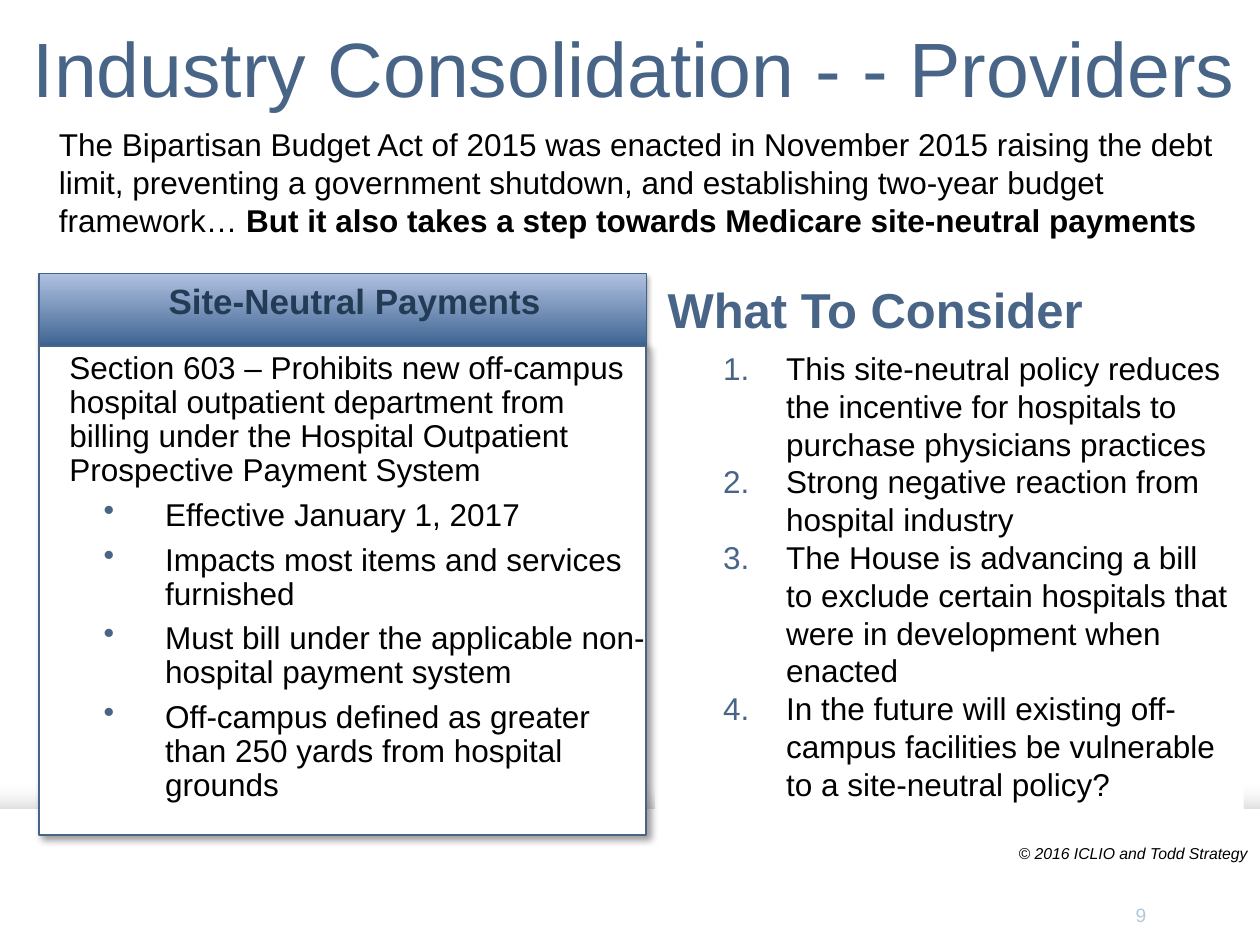
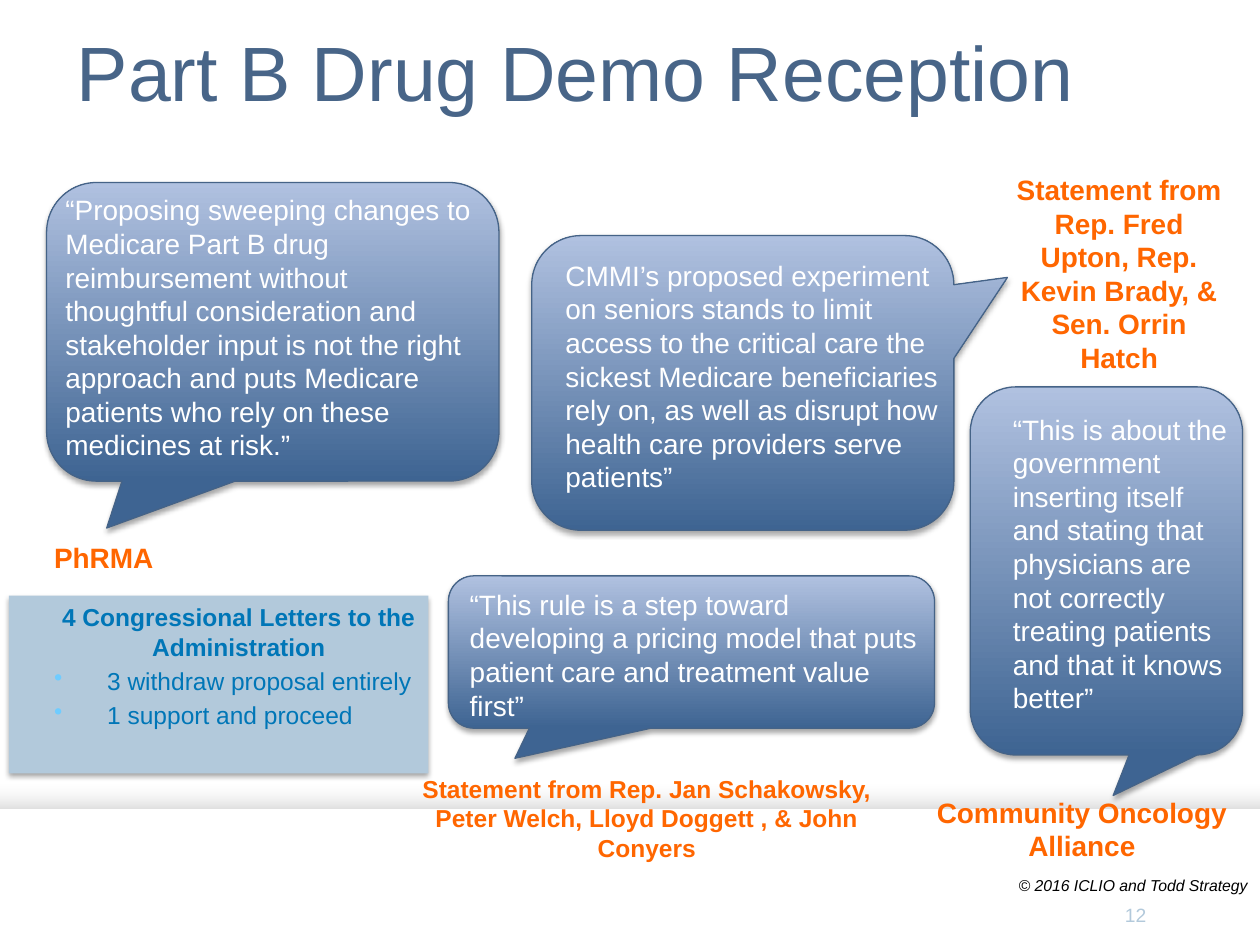
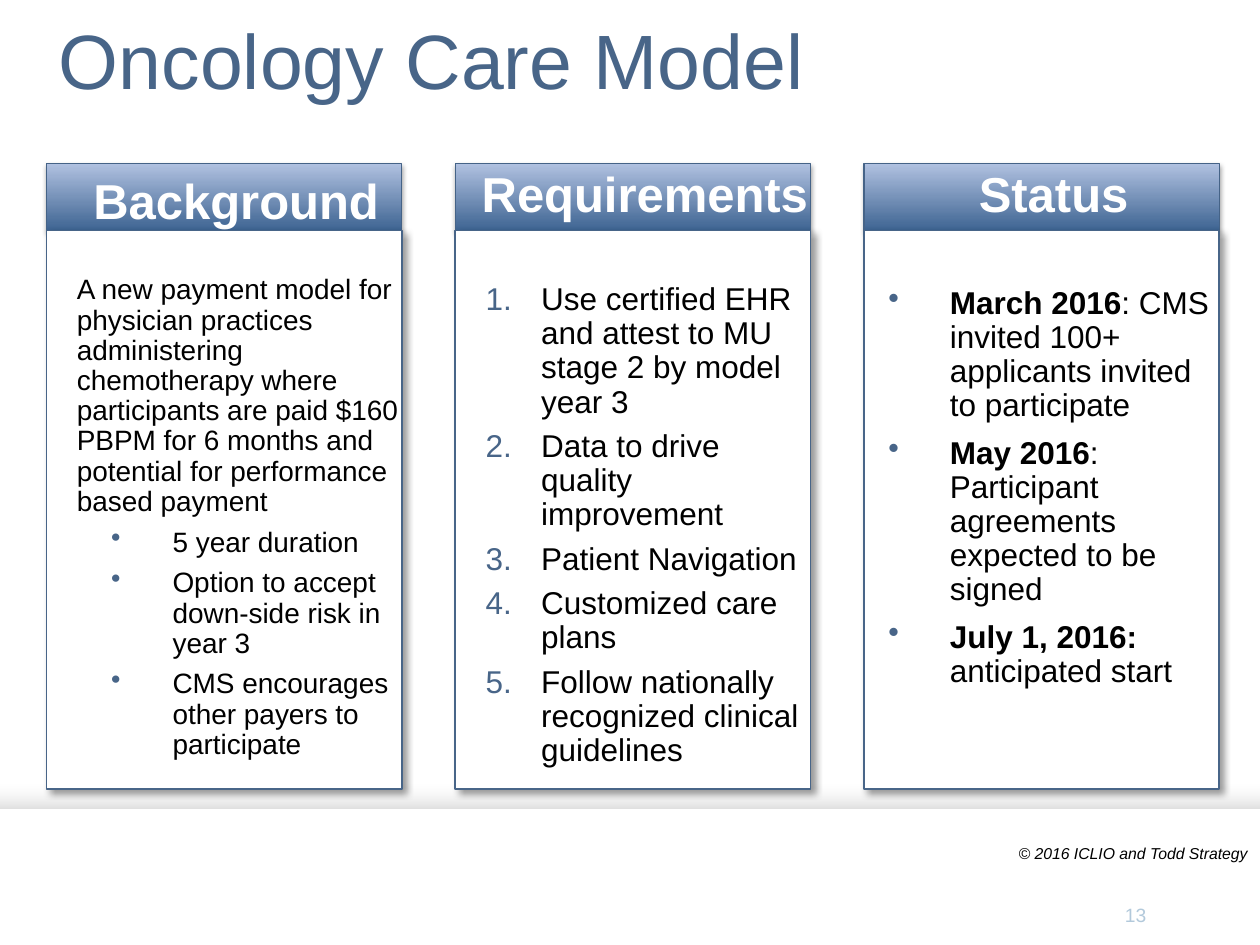
"""Build three slides on provider consolidation, the Part B drug demo and the Oncology Care Model."""
from lxml import etree
from pptx import Presentation
from pptx.dml.color import RGBColor
from pptx.enum.shapes import MSO_SHAPE
from pptx.enum.text import MSO_ANCHOR, PP_ALIGN
from pptx.oxml.ns import qn
from pptx.util import Cm, Pt

RECT = MSO_SHAPE.RECTANGLE
CALLOUT = MSO_SHAPE.ROUNDED_RECTANGULAR_CALLOUT
TOP, MIDDLE = MSO_ANCHOR.TOP, MSO_ANCHOR.MIDDLE
LEFT, CENTER, RIGHT = PP_ALIGN.LEFT, PP_ALIGN.CENTER, PP_ALIGN.RIGHT

FONT = "Arial"
BLACK = RGBColor(0x00, 0x00, 0x00)
WHITE = RGBColor(0xFF, 0xFF, 0xFF)
SLATE = RGBColor(0x48, 0x65, 0x88)
EDGE = RGBColor(0x45, 0x63, 0x87)
DEEP = RGBColor(0x3E, 0x64, 0x92)
HAZE = RGBColor(0xB0, 0xC1, 0xE0)
NAVY = RGBColor(0x24, 0x3B, 0x55)
PALE = RGBColor(0xB2, 0xC9, 0xDB)
BLUE = RGBColor(0x00, 0x76, 0xB7)
SKY = RGBColor(0x6F, 0xCC, 0xFF)
ORANGE = RGBColor(0xFF, 0x66, 0x00)

GRADIENT = [DEEP, HAZE]
BAND_SHADOW = (27, 17.5, 0, 270)
SOFT_SHADOW = (35, 3.1, 1.8, 90)
CARD_SHADOW = (40, 4, 3, 45)
RAISED = dict(fill=GRADIENT, line=EDGE, line_width=0.75, shadow=SOFT_SHADOW)
CARD = dict(fill=WHITE, line=SLATE, line_width=1, shadow=CARD_SHADOW, side=0)

CARD_TEXT = dict(spacing=0.9, before=2, after=4)
CARD_INTRO = dict(CARD_TEXT, indent=0.61)
CARD_BULLET = dict(CARD_TEXT, indent=2.54, hang=1.24, bullet="•")
HEADER_TEXT = dict(bold=True, align=CENTER, indent=0.48)


def add_box(slide, at, kind=None, fill=None, line=None, line_width=1, shadow=None,
            side=0.25, top=0.13, anchor=TOP):
    """Add a text box, or a preset shape when a kind is given."""
    place = [Cm(length) for length in at]
    if kind is None:
        box = slide.shapes.add_textbox(*place)
    else:
        box = slide.shapes.add_shape(kind, *place)
        box.shadow.inherit = False
        if isinstance(fill, RGBColor):
            box.fill.solid()
            box.fill.fore_color.rgb = fill
        else:
            box.fill.gradient()
            box.fill.gradient_angle = 90
            for stop, color in zip(box.fill.gradient_stops, fill):
                stop.color.rgb = color
        if line is None:
            box.line.fill.background()
        else:
            box.line.color.rgb = line
            box.line.width = Pt(line_width)
        if shadow:
            alpha, blur, distance, angle = shadow
            effects = box._element.spPr.find(qn("a:effectLst"))
            outer = etree.SubElement(effects, qn("a:outerShdw"), blurRad=str(Pt(blur)),
                                     dist=str(Pt(distance)), dir=str(angle * 60000),
                                     rotWithShape="0")
            tint = etree.SubElement(outer, qn("a:srgbClr"), val="000000")
            etree.SubElement(tint, qn("a:alpha"), val=str(alpha * 1000))
    frame = box.text_frame
    frame.word_wrap = True
    frame.vertical_anchor = anchor
    frame.margin_left = frame.margin_right = Cm(side)
    frame.margin_top, frame.margin_bottom = Cm(top), Cm(0.13)
    return box


def write(box, text, size=18, color=BLACK, bold=False, italic=False, align=LEFT, indent=0,
          hang=0, bullet=None, bullet_color=SLATE, spacing=1.0, before=0, after=0):
    """Add one paragraph; text between double asterisks is bold."""
    frame = box.text_frame
    first = not frame.text
    paragraph = frame.paragraphs[0] if first else frame.add_paragraph()
    props = paragraph._p.get_or_add_pPr()
    props.set("marL", str(Cm(indent)))
    props.set("indent", str(-Cm(hang)))
    if bullet:
        bullet_tint = etree.SubElement(props, qn("a:buClr"))
        etree.SubElement(bullet_tint, qn("a:srgbClr"), val=str(bullet_color))
        if bullet == "1.":
            etree.SubElement(props, qn("a:buAutoNum"), type="arabicPeriod")
        else:
            etree.SubElement(props, qn("a:buChar"), char=bullet)
    paragraph.alignment = align
    paragraph.line_spacing = spacing
    paragraph.space_before = Pt(0 if first else before)
    paragraph.space_after = Pt(after)
    for index, piece in enumerate(text.split("**")):
        if piece:
            run = paragraph.add_run()
            run.text = piece
            run.font.name = FONT
            run.font.size = Pt(size)
            run.font.color.rgb = color
            run.font.bold = bold or index % 2 == 1
            run.font.italic = italic


deck = Presentation()
deck.slide_width, deck.slide_height = Cm(25.4), Cm(19.05)

slides = []
for title, title_at, number, copyright_top in [
    ("Industry Consolidation - - Providers", (0.41, 0.28, 25.35, 3.18), "9", 16.87),
    ("Part B Drug Demo Reception", (1.3, 0.36, 22.86, 3.18), "12", 17.53),
    ("Oncology Care Model", (0.94, 0.13, 22.86, 3.18), "13", 16.87),
]:
    slide = deck.slides.add_slide(deck.slide_layouts[6])
    add_box(slide, (-0.66, 16.31, 27.25, 2.74), RECT, fill=WHITE, shadow=BAND_SHADOW)
    write(add_box(slide, title_at), title, size=44, color=SLATE)
    page_number = add_box(slide, (20.62, 17.93, 2.74, 1.02), anchor=MIDDLE)
    write(page_number, number, size=11, color=PALE, align=RIGHT)
    copyright_line = add_box(slide, (16.92, copyright_top, 8.48, 0.64))
    write(copyright_line, "© 2016 ICLIO and Todd Strategy", size=9, italic=True, align=RIGHT)
    slides.append(slide)
consolidation, reception, care_model = slides

budget_act = add_box(consolidation, (0.79, 2.39, 24.23, 3.33))
write(budget_act, "The Bipartisan Budget Act of 2015 was enacted in November 2015 raising the debt "
      "limit, preventing a government shutdown, and establishing two-year budget framework… "
      "**But it also takes a step towards Medicare site-neutral payments**", indent=0.15)

site_neutral = add_box(consolidation, (0.79, 5.51, 12.24, 1.47), RECT, **RAISED)
write(site_neutral, "Site-Neutral Payments", size=20, color=NAVY, **HEADER_TEXT)

consider = add_box(consolidation, (13.21, 5.51, 11.86, 10.9), RECT, fill=WHITE)
write(consider, "What To Consider", size=28, color=SLATE, bold=True, after=6)
for point in [
    "This site-neutral policy reduces the incentive for hospitals to purchase physicians practices",
    "Strong negative reaction from hospital industry",
    "The House is advancing a bill to exclude certain hospitals that were in development when enacted",
    "In the future will existing off-campus facilities be vulnerable to a site-neutral policy?",
]:
    write(consider, point, indent=2.39, hang=1.27, bullet="1.")

section_603 = add_box(consolidation, (0.79, 6.98, 12.24, 9.86), RECT, **CARD)
write(section_603, "Section 603 – Prohibits new off-campus hospital outpatient department from "
      "billing under the Hospital Outpatient Prospective Payment System", **CARD_INTRO)
for provision in [
    "Effective January 1, 2017",
    "Impacts most items and services furnished",
    "Must bill under the applicable non-hospital payment system",
    "Off-campus defined as greater than 250 yards from hospital grounds",
]:
    write(section_603, provision, **CARD_BULLET)

for bubble_at, tail, quote_at, quote in [
    ((0.94, 3.68, 9.12, 6.02), (-0.367, 0.657), (1.07, 3.76, 8.74, 6.4),
     "“Proposing sweeping changes to Medicare Part B drug reimbursement without thoughtful "
     "consideration and stakeholder input is not the right approach and puts Medicare patients "
     "who rely on these medicines at risk.”"),
    ((10.72, 4.75, 8.51, 5.94), (0.627, -0.358), (11.15, 5.08, 8.08, 5.05),
     "CMMI’s proposed experiment on seniors stands to limit access to the critical care the "
     "sickest Medicare beneficiaries rely on, as well as disrupt how health care providers "
     "serve patients”"),
    ((19.56, 7.8, 5.49, 7.42), (0.025, 0.61), (20.17, 8.18, 4.98, 6.58),
     "“This is about the government inserting itself and stating that physicians are not "
     "correctly treating patients and that it knows better”"),
    ((9.04, 11.61, 9.8, 3.07), (-0.363, 0.698), (9.22, 11.71, 9.78, 3),
     "“This rule is a step toward developing a pricing model that puts patient care and "
     "treatment value first”"),
]:
    bubble = add_box(reception, bubble_at, CALLOUT, **RAISED)
    bubble.adjustments[0], bubble.adjustments[1] = tail
    write(add_box(reception, quote_at), quote, size=16, color=WHITE)

for speaker_at, speaker, size, align in [
    ((0.84, 10.77, 3.89, 0.94), "PhRMA", 16, LEFT),
    ((20.17, 3.35, 4.78, 4.37),
     "Statement from Rep. Fred Upton, Rep. Kevin Brady, & Sen. Orrin Hatch", 16, CENTER),
    ((18.57, 15.9, 6.48, 1.63), "Community Oncology Alliance", 16, CENTER),
    ((8.05, 15.47, 9.98, 2.06),
     "Statement from Rep. Jan Schakowsky, Peter Welch, Lloyd Doggett , & John Conyers", 14, CENTER),
]:
    write(add_box(reception, speaker_at), speaker, size=size, color=ORANGE, bold=True, align=align)

letters = add_box(reception, (0.18, 12.01, 8.46, 3.58), RECT, fill=PALE, shadow=SOFT_SHADOW)
write(letters, "4 Congressional Letters to the Administration", size=14, color=BLUE, bold=True,
      align=CENTER, indent=0.81)
for position in ["3 withdraw proposal entirely", "1 support and proceed"]:
    write(letters, position, size=14, color=BLUE, indent=1.73, hang=1.07, bullet="•",
          bullet_color=SKY, before=2.8)

REQUIREMENT = dict(CARD_TEXT, indent=1.73, hang=1.12, bullet="1.")
MILESTONE = dict(CARD_TEXT, indent=1.73, hang=1.24, bullet="•", before=4)
for column, (heading, heading_spacing, text_top, entries) in enumerate([
    ("Background", 1.0, 0.91, [
        ("A new payment model for physician practices administering chemotherapy where "
         "participants are paid $160 PBPM for 6 months and potential for performance based "
         "payment", dict(CARD_INTRO, size=16)),
        ("5 year duration", dict(CARD_BULLET, size=16)),
        ("Option to accept down-side risk in year 3", dict(CARD_BULLET, size=16)),
        ("CMS encourages other payers to participate", dict(CARD_BULLET, size=16)),
    ]),
    ("Requirements", 0.9, 1.07, [
        ("Use certified EHR and attest to MU stage 2 by model year 3", REQUIREMENT),
        ("Data to drive quality improvement", REQUIREMENT),
        ("Patient Navigation", REQUIREMENT),
        ("Customized care plans", REQUIREMENT),
        ("Follow nationally recognized clinical guidelines", REQUIREMENT),
    ]),
    ("Status", 0.9, 1.14, [
        ("**March 2016**: CMS invited 100+ applicants invited to participate", MILESTONE),
        ("**May 2016**: Participant agreements expected to be signed", MILESTONE),
        ("**July 1, 2016:** anticipated start", MILESTONE),
    ]),
]):
    column_left = 0.94 + column * 8.24
    header = add_box(care_model, (column_left, 3.3, 7.16, 1.35), RECT, side=0, **RAISED)
    write(header, heading, size=28, color=WHITE, spacing=heading_spacing, **HEADER_TEXT)
    card = add_box(care_model, (column_left, 4.65, 7.16, 11.25), RECT, top=text_top, **CARD)
    for entry, style in entries:
        write(card, entry, **style)

deck.save("out.pptx")
